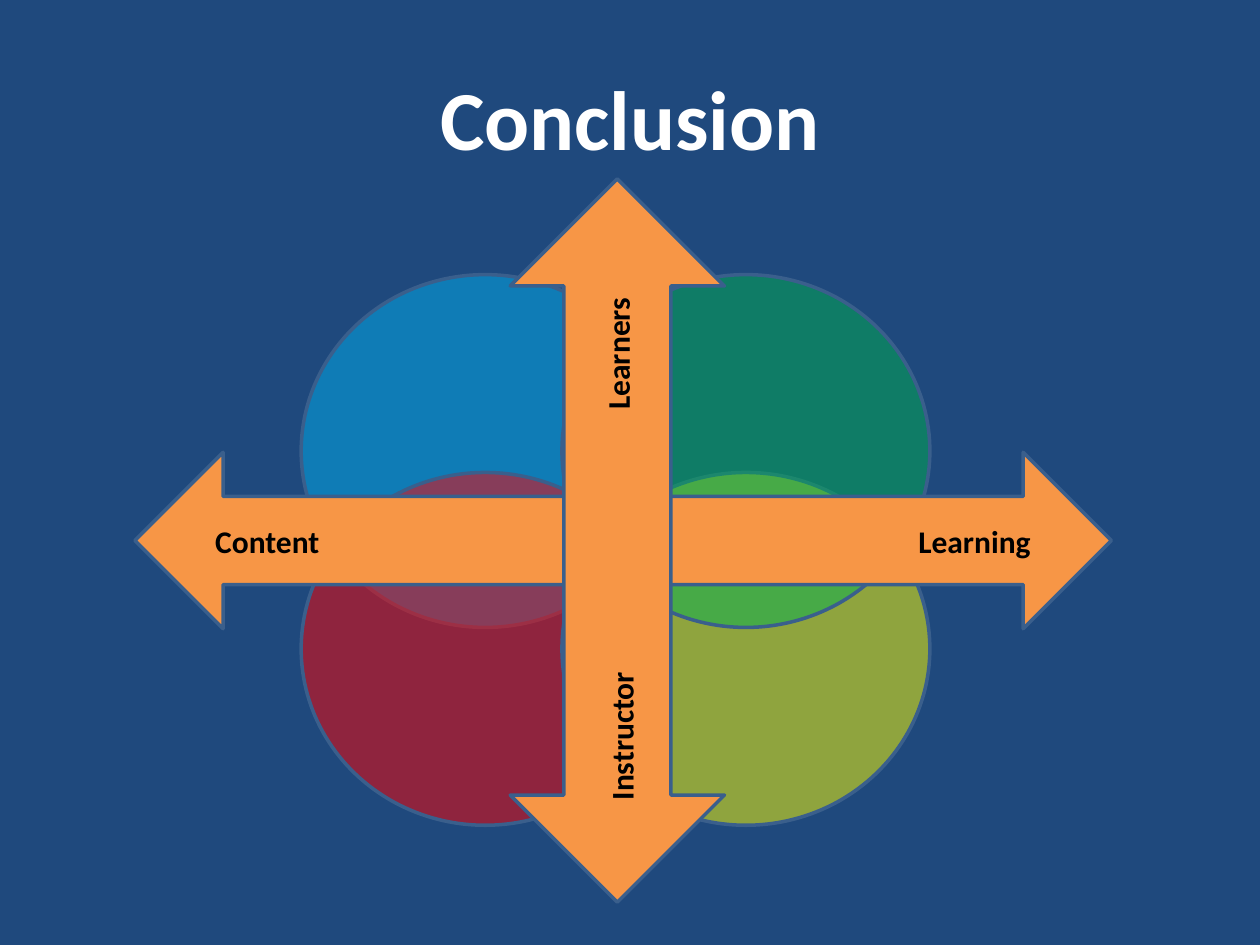
from dataclasses import dataclass

from lxml import etree
from pptx import Presentation
from pptx.dml.color import RGBColor
from pptx.enum import shapes, text
from pptx.oxml import ns
from pptx.util import Inches, Pt


@dataclass(frozen=True)
class Theme:
    font: str = "Calibri"
    back: str = "1F497D"
    title: str = "FFFFFF"
    label: str = "000000"
    arrow: str = "F79646"
    edge: str = "3A5F8C"
    blue: str = "00B0F0"
    red: str = "FF0000"
    yellow: str = "FFFF00"
    green: str = "00B050"
    big: int = 48
    small: int = 18
    line: int = 2
    alpha: int = 50


THEME = Theme()
KIND = shapes.MSO_SHAPE


def rgb(code):
    return RGBColor.from_string(code)


def add_shape(parent, kind, box, fill, alpha=None, turn=0):
    shape = parent.add_shape(kind, *map(Inches, box))
    shape.rotation = turn
    shape.shadow.inherit = False
    shape.fill.solid()
    shape.fill.fore_color.rgb = rgb(fill)
    shape.line.color.rgb = rgb(THEME.edge)
    shape.line.width = Pt(THEME.line)
    if alpha is not None:
        color = shape.fill._xPr.find(".//" + ns.qn("a:srgbClr"))
        etree.SubElement(color, ns.qn("a:alpha"), val=str(alpha * 1000))


def add_text(parent, words, box, size, color, turn=0):
    item = parent.add_textbox(*map(Inches, box))
    item.rotation = turn
    frame = item.text_frame
    frame.word_wrap = True
    para = frame.paragraphs[0]
    para.text = words
    para.font.name = THEME.font
    para.font.size = Pt(size)
    para.font.bold = True
    para.font.color.rgb = rgb(color)
    return frame


def add_title(parent, box):
    frame = add_text(parent, "Conclusion", box, THEME.big, THEME.title)
    frame.vertical_anchor = text.MSO_ANCHOR.MIDDLE
    frame.paragraphs[0].alignment = text.PP_ALIGN.CENTER


def add_venn(parent, box):
    """Four see-through ovals, one in each corner of the box."""
    left, top, width, height = box
    wide, high = 2.92, 2.8
    right, low = left + width - wide, top + height - high
    group = parent.add_group_shape().shapes
    for x, y, fill in (
        (left, top, THEME.blue),
        (left, low, THEME.red),
        (right, low, THEME.yellow),
        (right, top, THEME.green),
    ):
        add_shape(group, KIND.OVAL, (x, y, wide, high), fill, THEME.alpha)


def add_cross(parent, box):
    """Two double arrows crossing in the box, with a label at each end."""
    left, top, width, height = box
    thin, thick, tall = 1.4, 1.7, 0.4
    group = parent.add_group_shape().shapes

    def label(words, x, y, wide, turn=0):
        area = (left + x, top + y, wide, tall)
        add_text(group, words, area, THEME.small, THEME.label, turn)

    # Level arrow: an upright one turned about its centre
    mid_x, mid_y = left + width / 2, top + height / 2
    level = (mid_x - thin / 2, mid_y - width / 2, thin, width)
    add_shape(group, KIND.UP_DOWN_ARROW, level, THEME.arrow, turn=90)
    label("Content", 0.54, 2.67, 1.21)
    label("Learning", 6.12, 2.67, 1.17)

    # Upright arrow
    upright = (left + 2.98, top, thick, height)
    add_shape(group, KIND.UP_DOWN_ARROW, upright, THEME.arrow)
    label("Instructor", 3.17, 4.14, 1.38, 270)
    label("Learners", 3.17, 1.07, 1.32, 270)


def main():
    deck = Presentation()
    deck.slide_width, deck.slide_height = Inches(10), Inches(7.5)
    slide = deck.slides.add_slide(deck.slide_layouts[6])
    slide.background.fill.solid()
    slide.background.fill.fore_color.rgb = rgb(THEME.back)

    add_title(slide.shapes, (0.5, 0.3, 9, 1.25))
    add_venn(slide.shapes, (2.39, 2.18, 4.99, 4.37))
    add_cross(slide.shapes, (1.07, 1.42, 7.75, 5.74))
    deck.save("out.pptx")


if __name__ == "__main__":
    main()
